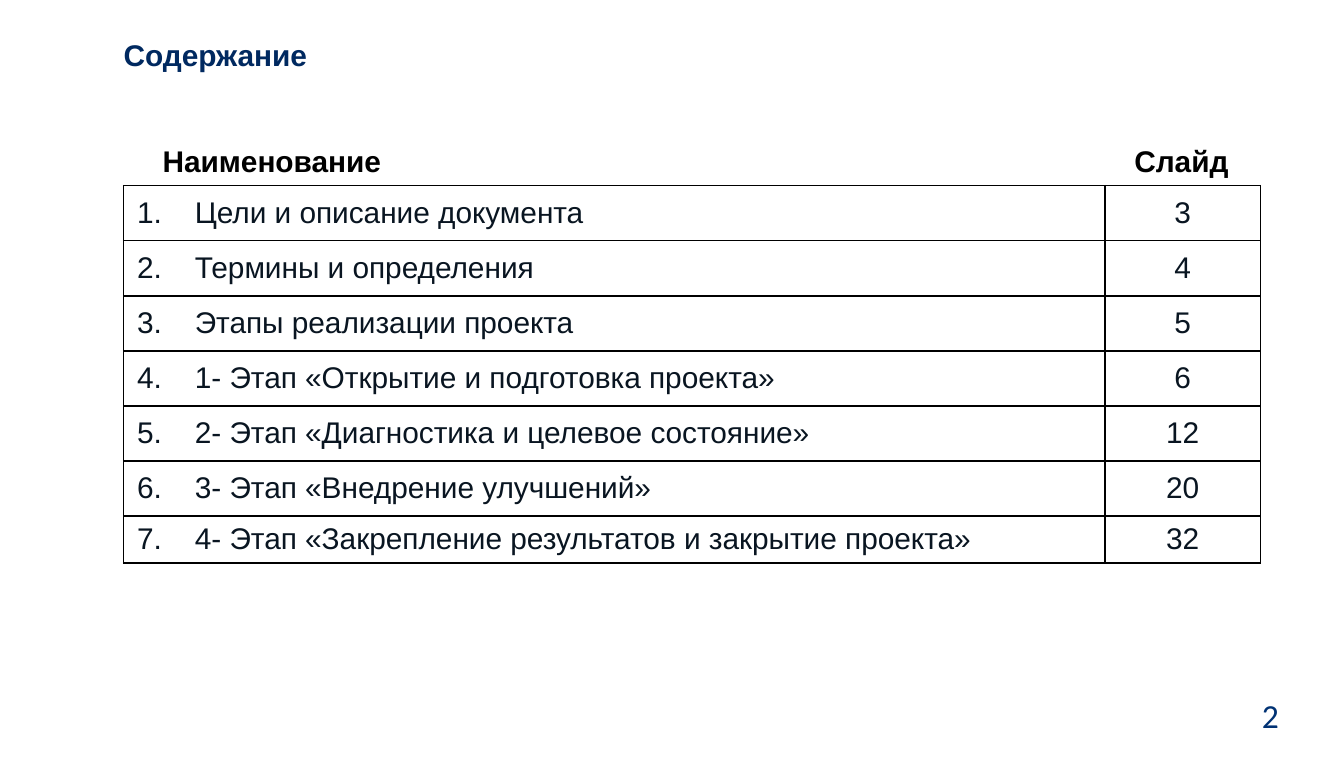
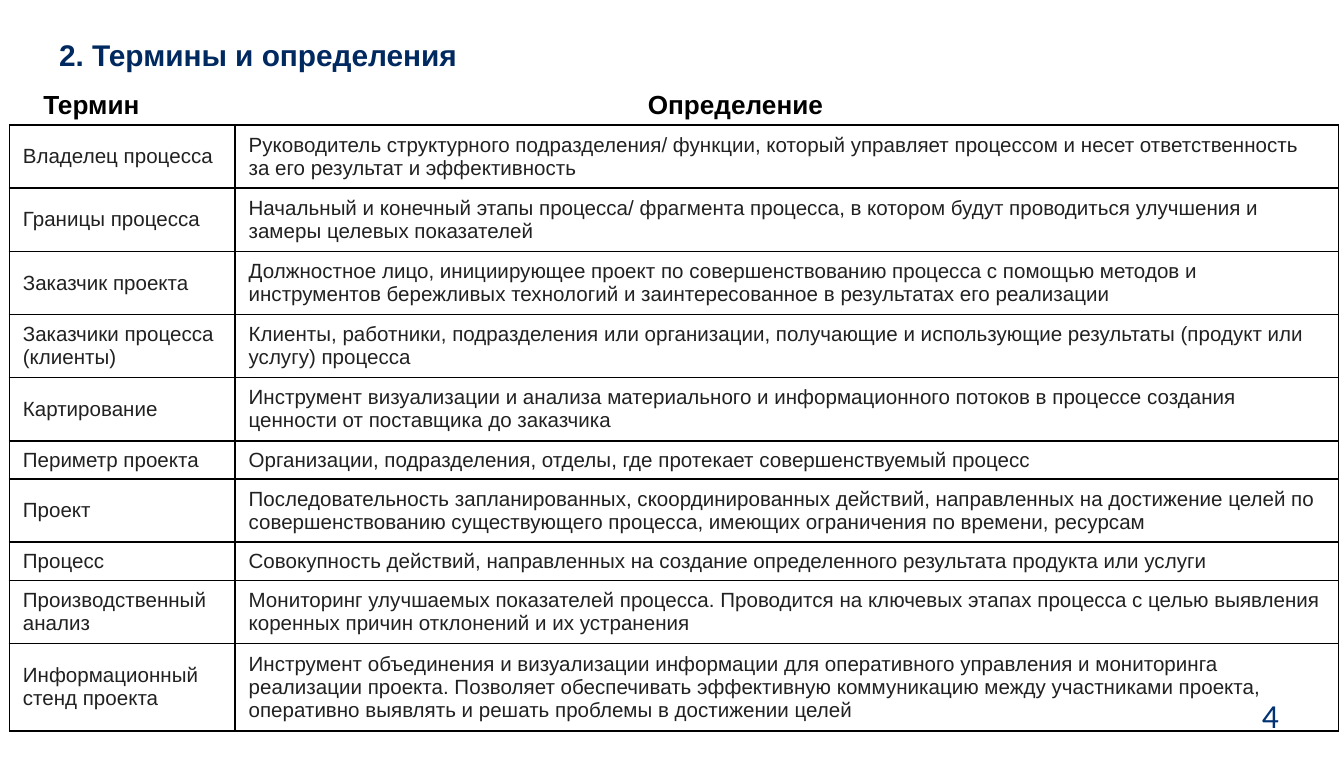
from lxml import etree
from pptx import Presentation
from pptx import util as u
from pptx.dml import color
from pptx.enum import text
from pptx.oxml import ns

FONT = "Arial"
NAVY, BLUE, BLACK = "002960", "003274", "000000"
CONTENTS_TEXT, TERMS_TEXT = "091521", "212121"
LEFT, CENTER = text.PP_ALIGN.LEFT, text.PP_ALIGN.CENTER

CONTENTS = [
    ("Цели и описание документа", 3),
    ("Термины и определения", 4),
    ("Этапы реализации проекта", 5),
    ("1- Этап «Открытие и подготовка проекта»", 6),
    ("2- Этап «Диагностика и целевое состояние»", 12),
    ("3- Этап «Внедрение улучшений»", 20),
    ("4- Этап «Закрепление результатов и закрытие проекта»", 32),
]

TERMS = [
    ("Владелец процесса",
     "Руководитель структурного подразделения/ функции, который управляет "
     "процессом и несет ответственность за его результат и эффективность"),
    ("Границы процесса",
     "Начальный и конечный этапы процесса/ фрагмента процесса, в котором "
     "будут проводиться улучшения и замеры целевых показателей"),
    ("Заказчик проекта",
     "Должностное лицо, инициирующее проект по совершенствованию процесса "
     "с помощью методов и инструментов бережливых технологий и "
     "заинтересованное в результатах его реализации"),
    ("Заказчики процесса (клиенты)",
     "Клиенты, работники, подразделения или организации, получающие и "
     "использующие результаты (продукт или услугу) процесса"),
    ("Картирование",
     "Инструмент визуализации и анализа материального и информационного "
     "потоков в процессе создания ценности от поставщика до заказчика"),
    ("Периметр проекта",
     "Организации, подразделения, отделы, где протекает совершенствуемый "
     "процесс"),
    ("Проект",
     "Последовательность запланированных, скоординированных действий, "
     "направленных на достижение целей по совершенствованию существующего "
     "процесса, имеющих ограничения по времени, ресурсам"),
    ("Процесс",
     "Совокупность действий, направленных на создание определенного "
     "результата продукта или услуги"),
    ("Производственный анализ",
     "Мониторинг улучшаемых показателей процесса. Проводится на ключевых "
     "этапах процесса с целью выявления коренных причин отклонений и их "
     "устранения"),
    ("Информационный стенд проекта",
     "Инструмент объединения и визуализации информации для оперативного "
     "управления и мониторинга реализации проекта. Позволяет обеспечивать "
     "эффективную коммуникацию между участниками проекта, оперативно "
     "выявлять и решать проблемы в достижении целей"),
]


def rgb(value):
    return color.RGBColor.from_string(value)


class Deck:
    def __init__(self):
        self.presentation = Presentation()
        self.presentation.slide_width = u.Inches(10)
        self.presentation.slide_height = u.Inches(5.63)
        self.slide = None

    def add_run(self, paragraph, content, size, ink, bold=False, align=LEFT, font=FONT):
        paragraph.alignment = align
        run = paragraph.add_run()
        run.text = content
        run.font.name = font
        run.font.size = u.Pt(size)
        run.font.bold = bold
        run.font.color.rgb = rgb(ink)

    def remove_insets(self, frame):
        frame.margin_left = frame.margin_right = 0
        frame.margin_top = frame.margin_bottom = 0

    def add_slide(self, title, left):
        self.slide = self.presentation.slides.add_slide(self.presentation.slide_layouts[5])
        shape = self.slide.shapes.title
        shape.left, shape.top = u.Inches(left), u.Inches(0.27)
        shape.width, shape.height = u.Inches(5.6), u.Inches(0.27)
        frame = shape.text_frame
        frame.word_wrap = True
        frame.auto_size = text.MSO_AUTO_SIZE.NONE
        frame.vertical_anchor = text.MSO_ANCHOR.MIDDLE
        self.remove_insets(frame)
        self.add_run(frame.paragraphs[0], title, 16, NAVY, bold=True)

    def add_text_box(self, left, top, width, height):
        box = self.slide.shapes.add_textbox(
            u.Inches(left), u.Inches(top), u.Inches(width), u.Inches(height))
        box.text_frame.word_wrap = True
        return box.text_frame

    def add_heading(self, content, left, top, width, size, align=LEFT):
        frame = self.add_text_box(left, top, width, 0.27)
        self.remove_insets(frame)
        self.add_run(frame.paragraphs[0], content, size, BLACK, bold=True, align=align)

    def add_page_number(self, number):
        frame = self.add_text_box(9.29, 5.12, 0.69, 0.41)
        self.add_run(frame.paragraphs[0], str(number), 18, BLUE, font="Calibri")

    def add_borders(self, cell):
        properties = cell._tc.get_or_add_tcPr()
        for side in ("a:lnL", "a:lnR", "a:lnT", "a:lnB"):
            line = etree.SubElement(properties, ns.qn(side), w=str(u.Pt(1)))
            fill = etree.SubElement(line, ns.qn("a:solidFill"))
            etree.SubElement(fill, ns.qn("a:srgbClr"), val=BLACK)

    def add_table(self, rows, left, top, widths, heights, size, ink,
                  aligns=(LEFT, LEFT), hanging=0):
        table = self.slide.shapes.add_table(
            len(rows), len(widths), u.Inches(left), u.Inches(top),
            u.Inches(sum(widths)), u.Inches(sum(heights))).table
        table.first_row = table.horz_banding = False
        for column, width in zip(table.columns, widths):
            column.width = u.Inches(width)
        for row, height, values in zip(table.rows, heights, rows):
            row.height = u.Inches(height)
            for cell, value, align in zip(row.cells, values, aligns):
                self.add_borders(cell)
                cell.fill.background()
                cell.vertical_anchor = text.MSO_ANCHOR.MIDDLE
                paragraph = cell.text_frame.paragraphs[0]
                if hanging and align == LEFT:
                    properties = paragraph._p.get_or_add_pPr()
                    properties.set("marL", str(u.Inches(hanging)))
                    properties.set("indent", str(-u.Inches(hanging)))
                self.add_run(paragraph, str(value), size, ink, align=align)


def build_contents(deck):
    deck.add_slide("Содержание", 0.92)
    rows = [(f"{number}.\t{name}", page)
            for number, (name, page) in enumerate(CONTENTS, 1)]
    deck.add_table(rows, 0.92, 1.38, (7.3, 1.16), [0.41] * 6 + [0.34], 16,
                   CONTENTS_TEXT, aligns=(LEFT, CENTER), hanging=0.43)
    deck.add_heading("Наименование", 1.21, 1.06, 4.22, 16)
    deck.add_heading("Слайд", 8.44, 1.06, 0.81, 16)
    deck.add_page_number(2)


def build_terms(deck):
    deck.add_slide("2. Термины и определения", 0.44)
    deck.add_heading("Термин", 0.07, 0.66, 1.22, 14, CENTER)
    deck.add_heading("Определение", 4.82, 0.66, 1.85, 14)
    double, single, triple = 0.47, 0.28, 0.65
    heights = [double] * 5 + [single, double] * 2 + [triple]
    deck.add_table(TERMS, 0.07, 0.93, (1.68, 8.21), heights, 11, TERMS_TEXT)
    deck.add_page_number(4)


def main():
    deck = Deck()
    build_contents(deck)
    build_terms(deck)
    deck.presentation.save("out.pptx")


if __name__ == "__main__":
    main()
